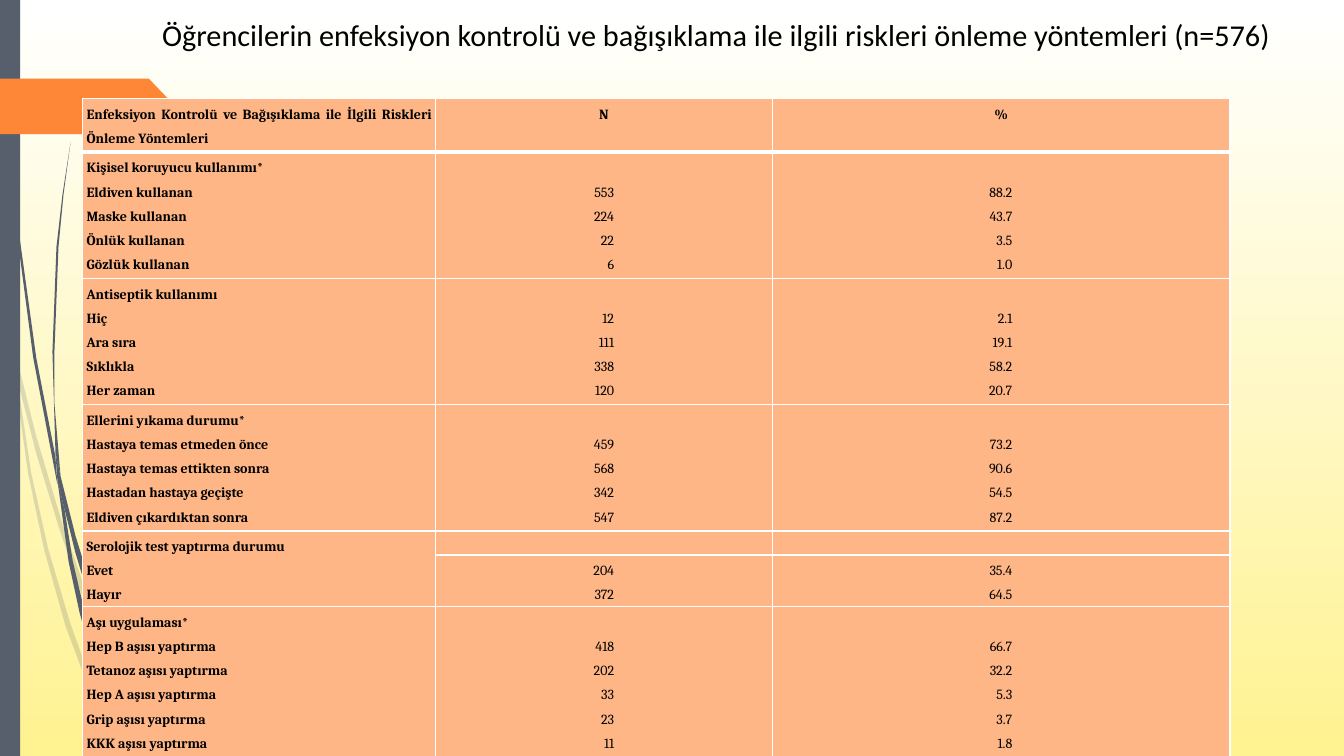
from lxml import etree
from pptx import Presentation
from pptx.dml import color
from pptx.enum import shapes, text
from pptx.oxml import ns
from pptx.util import Inches, Pt

SLATE, ORANGE, PEACH = "575F6D", "FE8637", "FEB687"
LINE_HEIGHT = 0.24
COLUMN_WIDTHS = (3.5, 3.34, 4.54)
NUMBER_INSETS = (1.57, 2.16)
HEADINGS = ("Enfeksiyon Kontrolü ve Bağışıklama ile İlgili Riskleri Önleme Yöntemleri", "N", "%")

GROUPS = [
    ("Kişisel koruyucu kullanımı*", [
        ("Eldiven kullanan", "553", "88.2"), ("Maske kullanan", "224", "43.7"),
        ("Önlük kullanan", "22", "3.5"), ("Gözlük kullanan", "6", "1.0")]),
    ("Antiseptik kullanımı", [
        ("Hiç", "12", "2.1"), ("Ara sıra", "111", "19.1"),
        ("Sıklıkla", "338", "58.2"), ("Her zaman", "120", "20.7")]),
    ("Ellerini yıkama durumu*", [
        ("Hastaya temas etmeden önce", "459", "73.2"),
        ("Hastaya temas ettikten sonra", "568", "90.6"),
        ("Hastadan hastaya geçişte", "342", "54.5"),
        ("Eldiven çıkardıktan sonra", "547", "87.2")]),
    ("Serolojik test yaptırma durumu", [("Evet", "204", "35.4"), ("Hayır", "372", "64.5")]),
    ("Aşı uygulaması*", [
        ("Hep B aşısı yaptırma", "418", "66.7"), ("Tetanoz aşısı yaptırma", "202", "32.2"),
        ("Hep A aşısı yaptırma", "33", "5.3"), ("Grip aşısı yaptırma", "23", "3.7"),
        ("KKK aşısı yaptırma", "11", "1.8")]),
]
SPLIT_GROUP = "Serolojik test yaptırma durumu"

PALE_STRANDS = [
    [(0.11, 3.5), (0.09, 3.22), (0, 2.82), (0, 2.99), (0.1, 3.44)],
    [(0.58, 5.22), (0.84, 5.99), (0.85, 5.86), (0.62, 5.2), (0.36, 4.33), (0.14, 3.45),
     (0.17, 3.76), (0.36, 4.5)],
    [(0.92, 6.07), (0.88, 5.96), (0.88, 6.1), (1.23, 6.94), (1.5, 7.5), (1.55, 7.5),
     (1.27, 6.92)],
    [(0.93, 6.83), (0.7, 6.19), (0.48, 5.45), (0.31, 4.69), (0.17, 3.76), (0.11, 3.5),
     (0.28, 4.7), (0.44, 5.46), (0.65, 6.21), (0.92, 6.93), (1.14, 7.5), (1.24, 7.5),
     (1.05, 7.11)],
    [(0.84, 5.99), (0.87, 6.46), (0.93, 6.83), (1.05, 7.11), (0.91, 6.46), (0.88, 6.08)],
    [(0.88, 5.84), (1.1, 4.62), (1.6, 3.49), (2.29, 2.45), (2.68, 1.98), (3.12, 1.54),
     (2.68, 1.97), (2.28, 2.44), (1.58, 3.48), (1.07, 4.61), (0.85, 5.84), (0.84, 5.99),
     (0.88, 6.1)],
]
DARK_STRANDS = [
    [(0.07, 1.1), (0.17, 2.33), (0.33, 3.55), (0.57, 4.81), (0.55, 4.53), (0.36, 3.55),
     (0.19, 2.32), (0.08, 1.09), (0.04, 0), (0.03, 0), (0.04, 0.48)],
    [(0.88, 5.92), (1.06, 6.45), (1.06, 6.31), (0.93, 5.9), (0.75, 5.32), (0.6, 4.72),
     (0.55, 4.49), (0.57, 4.77), (0.64, 5.05), (0.75, 5.49)],
    [(1.13, 6.49), (1.1, 6.41), (1.11, 6.56), (1.32, 7.08), (1.52, 7.5), (1.57, 7.5),
     (1.36, 7.06)],
    [(1.1, 6.91), (0.98, 6.57), (0.84, 6.07), (0.72, 5.56), (0.64, 5.05), (0.57, 4.77),
     (0.68, 5.57), (0.79, 6.08), (0.93, 6.59), (1.11, 7.08), (1.27, 7.5), (1.36, 7.5),
     (1.22, 7.19)],
    [(0.6, 4.72), (0.54, 4), (0.54, 3.49), (0.58, 2.45), (0.63, 1.93), (0.7, 1.41),
     (0.62, 1.93), (0.56, 2.45), (0.52, 3.49), (0.55, 4.49)],
    [(1.11, 6.33), (1.25, 5.52), (1.58, 4.76), (2.05, 4.06), (2.31, 3.74), (2.61, 3.44),
     (2.31, 3.73), (2.04, 4.05), (1.56, 4.74), (1.22, 5.51), (1.06, 6.31), (1.1, 6.41)],
    [(1.06, 6.31), (1.06, 6.45), (1.1, 6.91), (1.22, 7.19), (1.11, 6.56), (1.1, 6.41)],
]


def rgb(value):
    return color.RGBColor.from_string(value)


def paint(shape, fill, opacity=100):
    shape.shadow.inherit = False
    shape.fill.solid()
    shape.fill.fore_color.rgb = rgb(fill)
    shape.line.fill.background()
    if opacity < 100:
        swatch = shape.element.spPr.find(".//" + ns.qn("a:srgbClr"))
        etree.SubElement(swatch, ns.qn("a:alpha"), val=str(opacity * 1000))


def add_block(page, preset, left, top, width, height, fill):
    block = page.shapes.add_shape(
        preset, Inches(left), Inches(top), Inches(width), Inches(height))
    paint(block, fill)
    return block


def add_strand(page, outline, opacity):
    points = [(Inches(x), Inches(y)) for x, y in outline]
    builder = page.shapes.build_freeform(*points[0])
    builder.add_line_segments(points[1:], close=True)
    paint(builder.convert_to_shape(), SLATE, opacity)


def write(para, content, size=10, font="Cambria", bold=False, align=None, spacing=None):
    span = para.add_run()
    span.text = content
    span.font.size = Pt(size)
    span.font.name = font
    span.font.bold = bold
    span.font.color.rgb = rgb("000000")
    para.alignment = align
    para.line_spacing = spacing


def style_cell(cell, bottom=1):
    properties = cell._tc.get_or_add_tcPr()
    for side, width in (("L", 1), ("R", 1), ("T", 1), ("B", bottom)):
        border = etree.SubElement(properties, ns.qn("a:ln" + side), w=str(Pt(width)))
        fill = etree.SubElement(border, ns.qn("a:solidFill"))
        etree.SubElement(fill, ns.qn("a:srgbClr"), val="FFFFFF")
    cell.fill.solid()
    cell.fill.fore_color.rgb = rgb(PEACH)
    cell.margin_left = cell.margin_right = Inches(0.04)
    cell.margin_top = cell.margin_bottom = 0
    cell.text_frame.paragraphs[0]._p.get_or_add_endParaRPr().set("sz", "1000")


def fill_cell(cell, lines, align, bold=False):
    frame = cell.text_frame
    for index, line in enumerate(lines):
        para = frame.add_paragraph() if index else frame.paragraphs[0]
        write(para, line, bold=bold, align=align, spacing=1.5)


def add_methods_table(page):
    line_counts = []
    for name, entries in GROUPS:
        line_counts += [1, len(entries)] if name == SPLIT_GROUP else [len(entries) + 1]
    heights = [0.53] + [count * LINE_HEIGHT for count in line_counts]
    frame = page.shapes.add_table(
        len(heights), 3, Inches(0.82), Inches(0.98),
        Inches(sum(COLUMN_WIDTHS)), Inches(sum(heights)))
    table = frame.table
    table.first_row = table.horz_banding = False
    for column, width in zip(table.columns, COLUMN_WIDTHS):
        column.width = Inches(width)
    for index, height in enumerate(heights):
        table.rows[index].height = Inches(height)
        for cell in table.rows[index].cells:
            style_cell(cell, bottom=1 if index else 3)

    align = text.PP_ALIGN
    for column, heading in enumerate(HEADINGS):
        fill_cell(table.cell(0, column), [heading],
                  align.CENTER if column else align.JUSTIFY, bold=True)
    row = 1
    for name, entries in GROUPS:
        labels, *numbers = zip(*entries)
        fill_cell(table.cell(row, 0), [name, *labels], align.LEFT, bold=True)
        split = name == SPLIT_GROUP
        if split:
            table.cell(row, 0).merge(table.cell(row + 1, 0))
            row += 1
        for column, (values, inset) in enumerate(zip(numbers, NUMBER_INSETS), 1):
            cell = table.cell(row, column)
            cell.margin_right = Inches(inset)
            cell.margin_top = Inches(0 if split else LINE_HEIGHT)
            fill_cell(cell, values, align.RIGHT)
        row += 1


def add_title(page):
    box = page.shapes.add_textbox(Inches(1.51), Inches(0.11), Inches(11.61), Inches(0.87))
    box.text_frame.word_wrap = True
    write(box.text_frame.paragraphs[0],
          "Öğrencilerin enfeksiyon kontrolü ve bağışıklama ile ilgili riskleri önleme "
          "yöntemleri (n=576)", size=21.6, font="Calibri")


def set_background(page):
    fill = page.background.fill
    fill.gradient()
    fill.gradient_angle = 270
    for stop, shade in zip(fill.gradient_stops, ("FFFFFF", "FFF291")):
        stop.color.rgb = rgb(shade)


def main():
    deck = Presentation()
    deck.slide_width, deck.slide_height = Inches(13.33), Inches(7.5)
    page = deck.slides.add_slide(deck.slide_layouts[6])
    set_background(page)
    for strands, opacity in ((PALE_STRANDS, 20), (DARK_STRANDS, 100)):
        for outline in strands:
            add_strand(page, outline, opacity)
    add_block(page, shapes.MSO_SHAPE.RECTANGLE, 0, 0, 0.2, 7.5, SLATE)
    ribbon = add_block(page, shapes.MSO_SHAPE.PENTAGON, 0, 0.78, 1.74, 0.55, ORANGE)
    ribbon.adjustments[0] = 0.48
    add_title(page)
    add_methods_table(page)
    deck.save("out.pptx")


if __name__ == "__main__":
    main()
